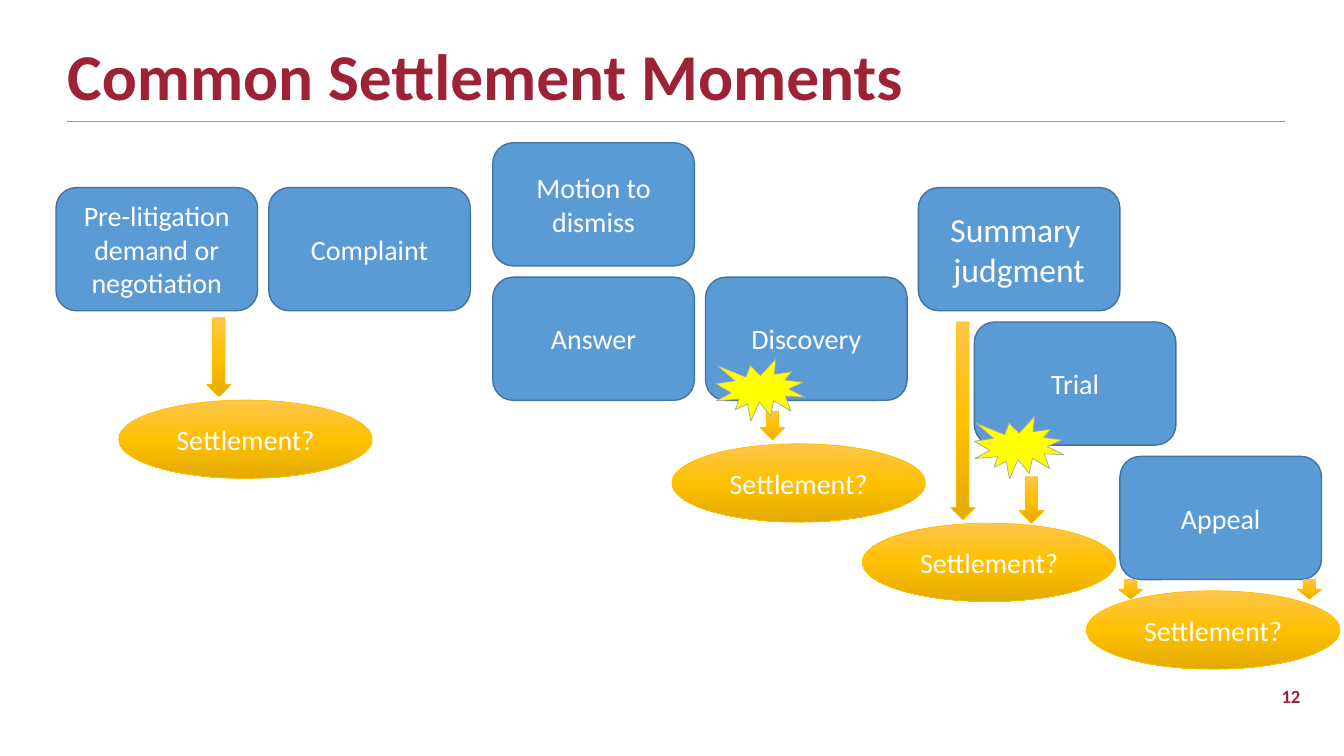
from pptx import Presentation
from pptx.dml.color import RGBColor
from pptx.enum.shapes import MSO_CONNECTOR, MSO_SHAPE as Shape
from pptx.enum.text import MSO_ANCHOR as Anchor, PP_ALIGN as Align
from pptx.oxml.ns import qn
from pptx.util import Pt
from copy import deepcopy
from lxml.etree import SubElement

TITLE = "Common Settlement Moments"
PAGE = "12"
SETTLEMENT = "Settlement?"
STAGES = [
    ("Pre-litigation demand or negotiation", 40, 134, 20),
    ("Motion to dismiss", 352, 102, 20),
    ("Complaint", 192, 134, 20),
    ("Answer", 352, 198, 20),
    ("Discovery", 504, 198, 20),
    ("Summary  judgment", 656, 134, 24),
    ("Trial", 696, 230, 20),
    ("Appeal", 800, 326, 20),
]
ARROWS = [
    (147.6, 227, 56.2),
    (543, 293.8, 20.2),
    (679, 230, 141.2),
    (799, 414, 13.7),
    (926.6, 414, 13.7),
    (728, 340.6, 33.1),
]
SETTLEMENTS = [(84.8, 285.8), (480, 317), (616, 373.7), (776, 422)]
BURSTS = [(511.2, 256.3), (696, 297.4)]

STAGE_SIZE = (144, 88)
ARROW_WIDTH = 17.5
SETTLEMENT_SIZE = (181, 56)
BURST_SIZE = (64, 44.6)
RED, WHITE, BLUE, DARK_BLUE = "9D2235", "FFFFFF", "5B9BD5", "43739E"
YELLOW, GREY, RULE, GOLD = "FFFF00", "A5A5A5", "9D968D", "FFC000"
GOLD_STOPS = [(0, "FFC64B"), (0.5, GOLD), (1, "E3AB00")]


def paint(color, value):
    color.rgb = RGBColor.from_string(value)


def write(shape, text, size, color, align, bold=False):
    frame = shape.text_frame
    frame.word_wrap = True
    frame.text = text
    paragraph = frame.paragraphs[0]
    paragraph.alignment = align
    font = paragraph.font
    font.name, font.size, font.bold = "Calibri", Pt(size), bold
    paint(font.color, color)
    return frame


def gild(shape):
    shape.fill.gradient()
    shape.fill.gradient_angle = 270
    stop_list = next(shape._element.spPr.iter(qn("a:gsLst")))
    stop_list.append(deepcopy(stop_list[0]))
    for stop, (position, color) in zip(shape.fill.gradient_stops, GOLD_STOPS):
        stop.position = position
        paint(stop.color, color)


def draw(kind, left, top, size, fill, outline, weight):
    shape = slide.shapes.add_shape(kind, *map(Pt, (left, top, *size)))
    shape.shadow.inherit = False
    if fill == GOLD:
        gild(shape)
    else:
        shape.fill.solid()
        paint(shape.fill.fore_color, fill)
    paint(shape.line.color, outline)
    shape.line.width = Pt(weight)
    shape.text_frame.vertical_anchor = Anchor.MIDDLE
    return shape


deck = Presentation()
deck.slide_width, deck.slide_height = Pt(960), Pt(540)
slide = deck.slides.add_slide(deck.slide_layouts[6])

rule = slide.shapes.add_connector(
    MSO_CONNECTOR.STRAIGHT, Pt(48), Pt(86.6), Pt(918), Pt(86.6))
paint(rule.line.color, RULE)
rule.line.width = Pt(0.5)
SubElement(rule._element.spPr, qn("a:effectLst"))

heading = slide.shapes.add_textbox(Pt(48), Pt(30), Pt(879), Pt(47))
heading_frame = write(heading, TITLE, 46.7, RED, Align.LEFT, True)
heading_frame.vertical_anchor = Anchor.MIDDLE
heading_frame.margin_left = heading_frame.margin_right = 0
heading_frame.margin_top = heading_frame.margin_bottom = 0

for name, left, top, size in STAGES:
    stage = draw(Shape.ROUNDED_RECTANGLE, left, top, STAGE_SIZE, BLUE, DARK_BLUE, 1)
    write(stage, name, size, WHITE, Align.CENTER)

for left, top, length in ARROWS:
    draw(Shape.DOWN_ARROW, left, top, (ARROW_WIDTH, length), GOLD, GOLD, 0.5)

for left, top in SETTLEMENTS:
    settlement = draw(Shape.OVAL, left, top, SETTLEMENT_SIZE, GOLD, GOLD, 0.5)
    write(settlement, SETTLEMENT, 20, WHITE, Align.CENTER)

for left, top in BURSTS:
    draw(Shape.EXPLOSION1, left, top, BURST_SIZE, YELLOW, GREY, 0.5)

page_number = slide.shapes.add_textbox(Pt(640), Pt(486), Pt(296), Pt(23.5))
write(page_number, PAGE, 13.3, RED, Align.RIGHT, True)

deck.save("out.pptx")
